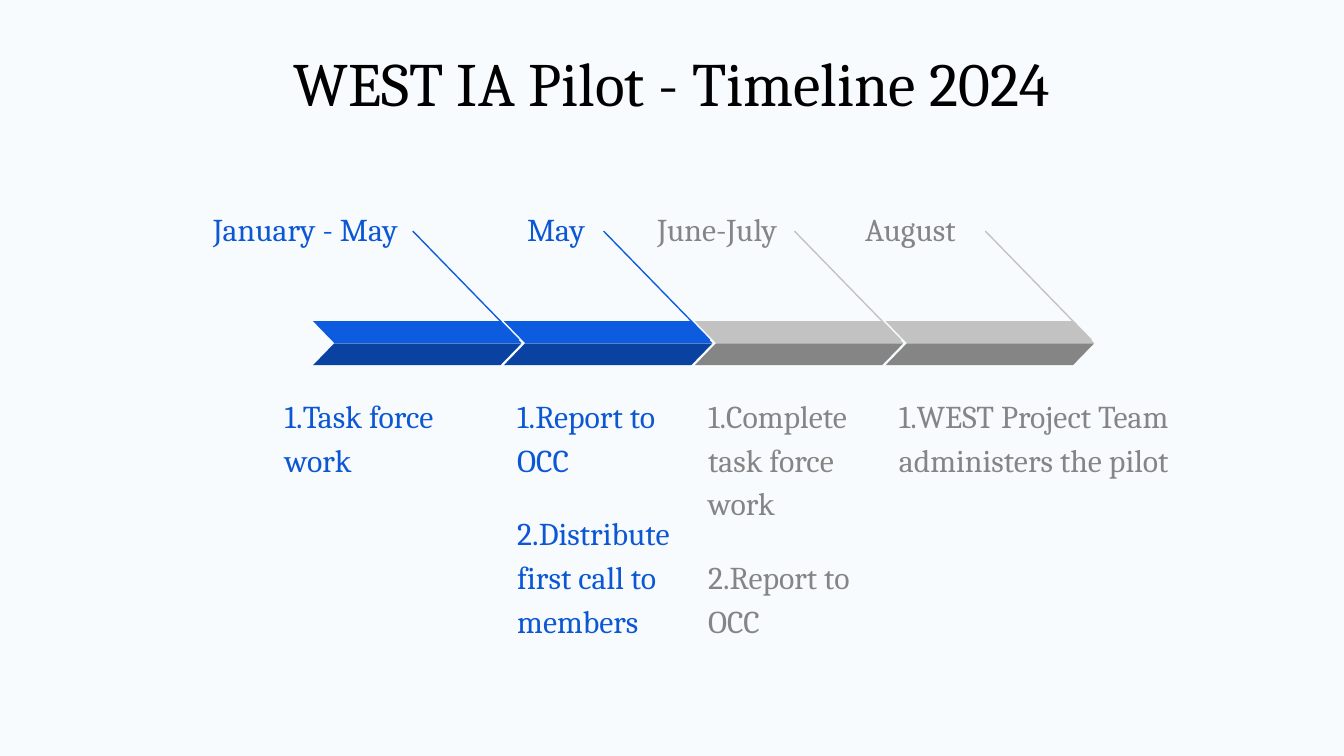
import pptx
import pptx.dml.color
import pptx.enum.shapes
import pptx.enum.text
import pptx.oxml
import pptx.util

Pt = pptx.util.Pt
ALIGN = pptx.enum.text.PP_ALIGN
ANCHOR = pptx.enum.text.MSO_ANCHOR
SHAPE = pptx.enum.shapes.MSO_SHAPE

THEME = {
    "font": "Cambria",
    "title_size": 33,
    "text_size": 17,
    "background": "F8FBFD",
    "title": "000000",
    "active": {"light": "0D5CDF", "dark": "0942A1", "text": "0C57D3"},
    "upcoming": {"light": "C2C2C2", "dark": "858585", "text": "858585"},
}

TITLE = "WEST IA Pilot - Timeline 2024"

# label_box and task_box hold (left, width, height)
STAGES = [
    {"label": "January - May", "status": "active",
     "tasks": ["1.Task force work"],
     "label_box": (87.84, 132.48, 25.2), "task_box": (145.44, 123.12, 94.32)},
    {"label": "May", "status": "active",
     "tasks": ["1.Report to OCC", "2.Distribute first call to members"],
     "label_box": (271.44, 48.96, 18.72), "task_box": (270, 100.08, 94.32)},
    {"label": "June-July", "status": "upcoming",
     "tasks": ["1.Complete task force work", "2.Report to OCC"],
     "label_box": (322.56, 100.8, 18.72), "task_box": (372.24, 100.8, 94.32)},
    {"label": "August", "status": "upcoming",
     "tasks": ["1.WEST Project Team administers the pilot"],
     "label_box": (453.6, 65.52, 18.72), "task_box": (474.48, 174.96, 176.4)},
]

FIRST_LEFT, STAGE_PITCH = 167.76, 102.24
BAND_WIDTH, BAND_HEIGHT, BAND_SLANT = 111.6, 11.6, 0.97
UPPER_TOP, LOWER_TOP = 172.08, 184
LEADER_START, LEADER_END = (53.4, 123.84), (110.2, 182.16)
LABEL_TOP, TASK_TOP = 102.24, 202.32


def color(value):
    return pptx.dml.color.RGBColor.from_string(value)


def add_text(slide, box, paragraphs, size, text_color, align, *,
             inset=7.2, anchor=ANCHOR.TOP, line_spacing=1.15, gap=0):
    shape = slide.shapes.add_textbox(*map(Pt, box))
    frame = shape.text_frame
    frame.word_wrap = True
    frame.vertical_anchor = anchor
    frame.margin_left = frame.margin_right = Pt(7.2)
    frame.margin_top = frame.margin_bottom = Pt(inset)
    for index, text in enumerate(paragraphs):
        paragraph = frame.add_paragraph() if index else frame.paragraphs[0]
        paragraph.alignment = align
        paragraph.line_spacing = line_spacing
        paragraph.space_before = Pt(gap if index else 0)
        run = paragraph.add_run()
        run.text = text
        run.font.name = THEME["font"]
        run.font.size = Pt(size)
        run.font.color.rgb = color(text_color)


def add_leader(slide, left, line_color):
    (start_x, start_y), (end_x, end_y) = LEADER_START, LEADER_END
    connector = slide.shapes.add_connector(
        pptx.enum.shapes.MSO_CONNECTOR.STRAIGHT,
        Pt(left + start_x), Pt(start_y), Pt(left + end_x), Pt(end_y))
    connector.line.color.rgb = color(line_color)
    connector.line.width = Pt(0.75)
    properties = connector._element.spPr
    properties.append(pptx.oxml.parse_xml(
        '<a:effectLst xmlns:a="http://schemas.openxmlformats.org/drawingml/2006/main"/>'))


def add_band(slide, left, top, fill, flipped):
    """Add one half of a chevron; the upper half is flipped sideways."""
    shape = slide.shapes.add_shape(
        SHAPE.PARALLELOGRAM, Pt(left), Pt(top), Pt(BAND_WIDTH), Pt(BAND_HEIGHT))
    shape.adjustments[0] = BAND_SLANT
    shape.shadow.inherit = False
    shape.fill.solid()
    shape.fill.fore_color.rgb = color(fill)
    shape.line.fill.background()
    if flipped:
        shape._element.spPr.xfrm.set("flipH", "1")


def add_stage(slide, index, stage):
    palette = THEME[stage["status"]]
    left = FIRST_LEFT + index * STAGE_PITCH
    add_leader(slide, left, palette["light"])
    add_band(slide, left, UPPER_TOP, palette["light"], True)
    add_band(slide, left, LOWER_TOP, palette["dark"], False)
    for key, top, paragraphs, align in (
            ("task_box", TASK_TOP, stage["tasks"], ALIGN.LEFT),
            ("label_box", LABEL_TOP, [stage["label"]], ALIGN.RIGHT)):
        box_left, width, height = stage[key]
        add_text(slide, (box_left, top, width, height), paragraphs,
                 THEME["text_size"], palette["text"], align, gap=16)


def main():
    presentation = pptx.Presentation()
    presentation.slide_width, presentation.slide_height = Pt(720), Pt(405)
    slide = presentation.slides.add_slide(presentation.slide_layouts[6])
    slide.background.fill.solid()
    slide.background.fill.fore_color.rgb = color(THEME["background"])
    add_text(slide, (36, 10.08, 648, 67.68), [TITLE], THEME["title_size"],
             THEME["title"], ALIGN.CENTER, inset=3.6,
             anchor=ANCHOR.MIDDLE, line_spacing=1.0)
    for index, stage in enumerate(STAGES):
        add_stage(slide, index, stage)
    presentation.save("out.pptx")


if __name__ == "__main__":
    main()
